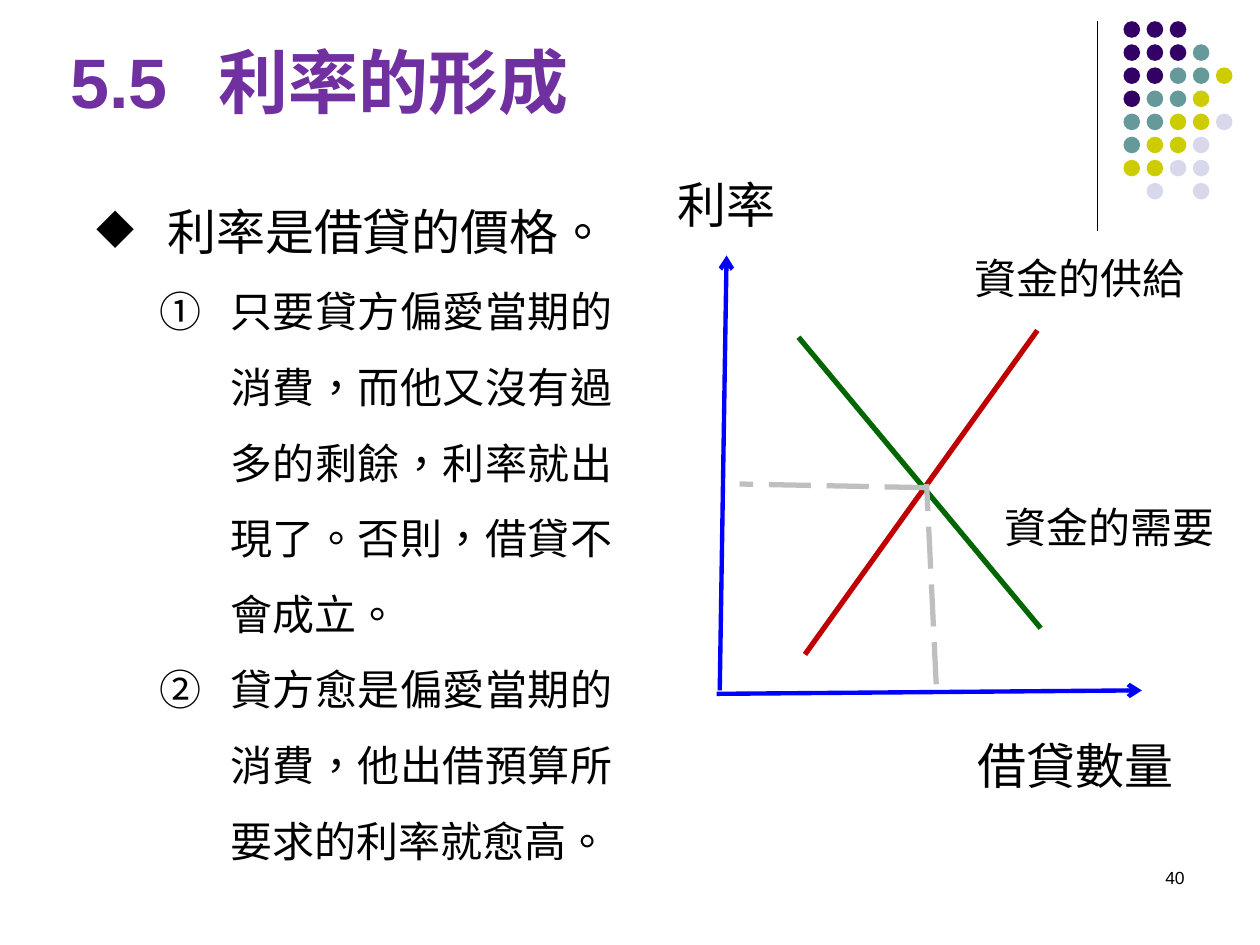
from lxml.etree import SubElement
from pptx import Presentation
from pptx.dml.color import RGBColor
from pptx.enum.dml import MSO_LINE
from pptx.enum.shapes import MSO_CONNECTOR, MSO_SHAPE
from pptx.enum.text import MSO_ANCHOR, MSO_AUTO_SIZE, PP_ALIGN
from pptx.oxml.ns import qn
from pptx.util import Pt

BLACK = RGBColor(0x00, 0x00, 0x00)
PURPLE = RGBColor(0x70, 0x30, 0xA0)
BLUE = RGBColor(0x00, 0x00, 0xFF)
RED = RGBColor(0xC0, 0x00, 0x00)
GREEN = RGBColor(0x00, 0x66, 0x00)
GRAY = RGBColor(0xBF, 0xBF, 0xBF)
INDIGO = RGBColor(0x33, 0x00, 0x66)
TEAL = RGBColor(0x66, 0x99, 0x99)
OLIVE = RGBColor(0xCC, 0xCC, 0x00)
PALE = RGBColor(0xD8, 0xD8, 0xEC)


def write(para, text, size=24, color=BLACK, bold=False, align=PP_ALIGN.LEFT,
          space=None, indent=None, bullet=None, tab=None):
    """Fill a paragraph; indent is (margin, hang), bullet is (tag, key, value)."""
    run = para.add_run()
    run.text = text
    run.font.name = "Arial"
    run.font.size = Pt(size)
    run.font.bold = bold
    run.font.color.rgb = color
    run._r.get_or_add_rPr().set("lang", "zh-TW")
    para.alignment = align
    if space:
        para.line_spacing = space
    props = para._p.get_or_add_pPr()
    if indent:
        margin, hang = indent
        props.set("marL", str(Pt(margin)))
        props.set("indent", str(Pt(-hang)))
    if bullet:
        tag, key, value = bullet
        SubElement(props, qn(tag)).set(key, value)
    if tab:
        stop = SubElement(SubElement(props, qn("a:tabLst")), qn("a:tab"))
        stop.set("pos", str(Pt(tab)))
        stop.set("algn", "l")


class Deck:
    def __init__(self, slide):
        self.shapes = slide.shapes

    def frame(self, left, top, width, height, wrap=True, anchor=MSO_ANCHOR.TOP):
        box = self.shapes.add_textbox(Pt(left), Pt(top), Pt(width), Pt(height))
        frame = box.text_frame
        frame.word_wrap = wrap
        frame.vertical_anchor = anchor
        if not wrap:
            frame.auto_size = MSO_AUTO_SIZE.SHAPE_TO_FIT_TEXT
        return frame

    def label(self, text, left, top, width, height, wrap=False,
              anchor=MSO_ANCHOR.TOP, **style):
        frame = self.frame(left, top, width, height, wrap, anchor)
        write(frame.paragraphs[0], text, **style)

    def line(self, start, end, color, width=3, dash=None, arrow=False):
        line = self.shapes.add_connector(
            MSO_CONNECTOR.STRAIGHT, *map(Pt, (*start, *end)))
        line.line.color.rgb = color
        line.line.width = Pt(width)
        if dash:
            line.line.dash_style = dash
        if arrow:
            SubElement(line.line._get_or_add_ln(), qn("a:tailEnd")).set("type", "arrow")
        SubElement(line._element.spPr, qn("a:effectLst"))

    def dot(self, left, top, size, color):
        dot = self.shapes.add_shape(
            MSO_SHAPE.OVAL, Pt(left), Pt(top), Pt(size), Pt(size))
        dot.shadow.inherit = False
        dot.fill.solid()
        dot.fill.fore_color.rgb = color
        dot.line.fill.background()


def main():
    show = Presentation()
    show.slide_width, show.slide_height = Pt(720), Pt(540)
    deck = Deck(show.slides.add_slide(show.slide_layouts[6]))

    # Corner rule and dot grid
    deck.line((627, 12), (627, 132), BLACK, 0.75)
    hues = {"I": INDIGO, "T": TEAL, "O": OLIVE, "P": PALE}
    grid = ("III", "IIIT", "IITTO", "ITTO", "TTOOP", "TOOP", "OOPP", " P P")
    for row, marks in enumerate(grid):
        for col, mark in enumerate(marks):
            if mark in hues:
                deck.dot(642 + 13.2 * col, 12.1 + 13.2 * row, 9.5, hues[mark])

    # Title and page number
    deck.label("5.5\t利率的形成", 33, 16.5, 590, 58.5, wrap=True,
               anchor=MSO_ANCHOR.MIDDLE, size=40, color=PURPLE, bold=True, tab=85)
    deck.label("40", 516, 492, 168, 36, wrap=True, size=10, align=PP_ALIGN.RIGHT)

    # Body list
    number = ("a:buAutoNum", "type", "circleNumWdWhitePlain")
    items = (
        ("利率是借貸的價格。", 28, 0, ("a:buChar", "char", "◆")),
        ("只要貸方偏愛當期的消費，而他又沒有過多的剩餘，利率就出現了。否則，借貸不會成立。",
         24, 1, number),
        ("貸方愈是偏愛當期的消費，他出借預算所要求的利率就愈高。", 24, 1, number),
    )
    body = deck.frame(48, 95, 309, 402)
    for rank, (text, size, level, bullet) in enumerate(items):
        para = body.add_paragraph() if rank else body.paragraphs[0]
        para.level = level
        write(para, text, size=size, align=PP_ALIGN.JUSTIFY, space=1.5,
              indent=(40.5 + 36 * level, 40.5), bullet=bullet)

    # Axes
    deck.line((409.5, 396.5), (652.5, 394.5), BLUE, 2.5, arrow=True)
    deck.line((411.3, 394.5), (415.2, 146), BLUE, 2.5, arrow=True)

    # Supply and demand curves
    deck.line((460, 374), (592.8, 188.8), RED)
    deck.line((594.7, 359), (456.3, 192.7), GREEN)

    # Guides from the balance point
    deck.line((529.5, 278.7), (422.6, 276.6), GRAY, dash=MSO_LINE.LONG_DASH)
    deck.line((535, 391), (529.5, 276.6), GRAY, dash=MSO_LINE.LONG_DASH)

    # Chart labels
    deck.label("資金的供給", 550, 141, 135.5, 36)
    deck.label("資金的需要", 567, 283, 135.5, 36)
    deck.label("利率", 380, 96, 71, 41, size=28)
    deck.label("借貸數量", 551.5, 417, 127.5, 41, size=28)

    show.save("out.pptx")


if __name__ == "__main__":
    main()
